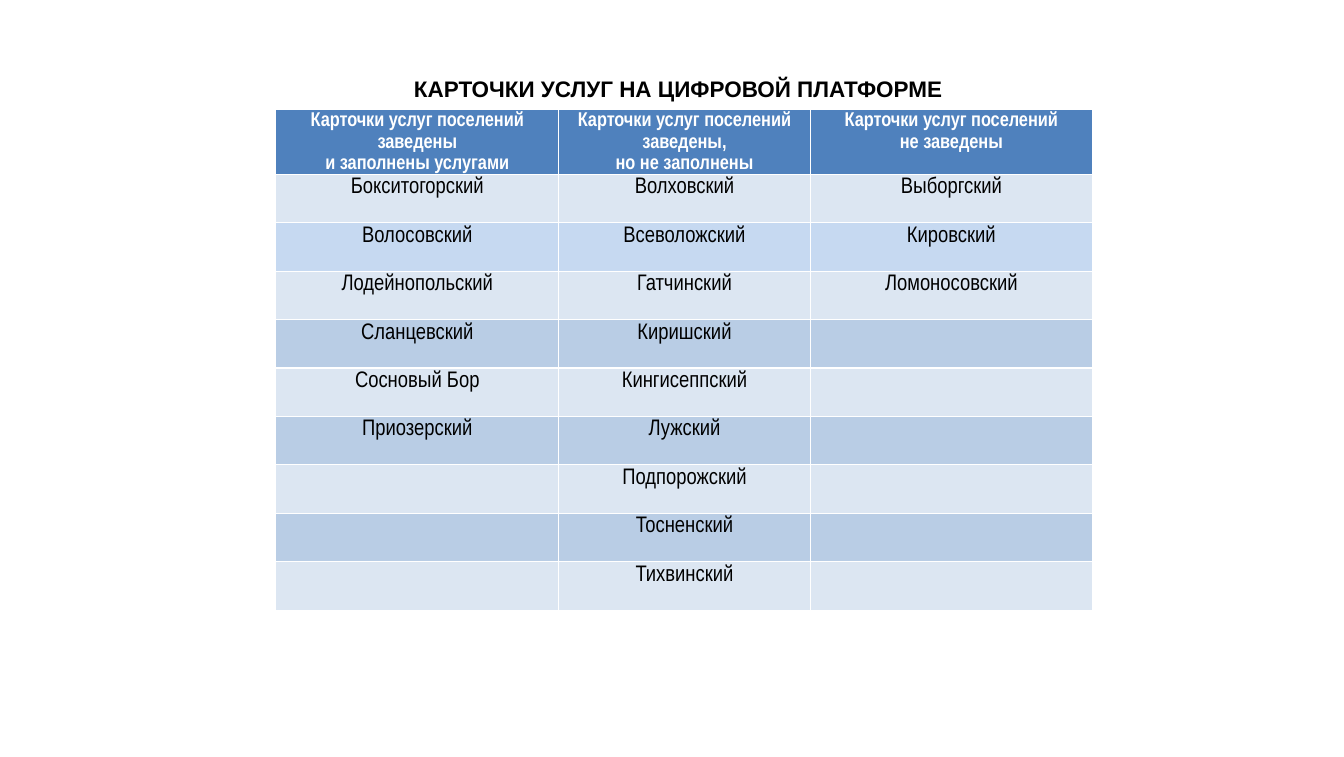
from itertools import zip_longest

from pptx import Presentation
from pptx.dml.color import RGBColor
from pptx.enum.text import MSO_ANCHOR, PP_ALIGN
from pptx.util import Cm, Pt

CENTER = PP_ALIGN.CENTER
MIDDLE = MSO_ANCHOR.MIDDLE
HEX = {
    "head": "4F81BD",
    "pale": "DCE6F2",
    "sky": "C6D9F1",
    "blue": "B9CDE5",
    "white": "FFFFFF",
    "black": "000000",
}
HEADS = [
    "Карточки услуг поселений\nзаведены\nи заполнены услугами",
    "Карточки услуг поселений заведены,\nно не заполнены",
    "Карточки услуг поселений\nне заведены",
]
AREAS = [
    ["Бокситогорский", "Волосовский", "Лодейнопольский", "Сланцевский",
     "Сосновый Бор", "Приозерский"],
    ["Волховский", "Всеволожский", "Гатчинский", "Киришский", "Кингисеппский",
     "Лужский", "Подпорожский", "Тосненский", "Тихвинский"],
    ["Выборгский", "Кировский", "Ломоносовский"],
]
WIDTHS = [8, 7.11, 7.98]
HEAD_H, ROW_H = 1.75, 1.37


def color(name):
    return RGBColor.from_string(HEX[name])


def style(para, face, size, bold, tone):
    para.alignment = CENTER
    font = para.font
    font.name, font.size, font.bold = face, Pt(size), bold
    font.color.rgb = color(tone)


def add_title(slide, left, top, width, height):
    title = slide.shapes.title
    title.left, title.top = Cm(left), Cm(top)
    title.width, title.height = Cm(width), Cm(height)
    frame = title.text_frame
    frame.text = "КАРТОЧКИ УСЛУГ НА ЦИФРОВОЙ ПЛАТФОРМЕ"
    frame.vertical_anchor = MIDDLE
    style(frame.paragraphs[0], "Arial", 18, True, "black")


def fill_cell(cell, text, fill, size, bold, tone):
    cell.fill.solid()
    cell.fill.fore_color.rgb = color(fill)
    cell.margin_left = cell.margin_right = Cm(0.19)
    cell.margin_top = cell.margin_bottom = 0
    cell.text_frame.text = text
    for para in cell.text_frame.paragraphs:
        style(para, "Arial Narrow", size, bold, tone)
        para.line_spacing = 1.15


def row_fill(row):
    if row % 2:
        return "pale"
    return "sky" if row == 2 else "blue"


def add_areas(slide, left, top):
    rows = list(zip_longest(*AREAS, fillvalue=""))
    height = HEAD_H + ROW_H * len(rows)
    table = slide.shapes.add_table(
        len(rows) + 1, len(HEADS), Cm(left), Cm(top), Cm(sum(WIDTHS)), Cm(height)
    ).table
    for col, width in zip(table.columns, WIDTHS):
        col.width = Cm(width)
    table.rows[0].height = Cm(HEAD_H)
    for col, text in enumerate(HEADS):
        fill_cell(table.cell(0, col), text, "head", 16, True, "white")
    for row, names in enumerate(rows, 1):
        table.rows[row].height = Cm(ROW_H)
        for col, name in enumerate(names):
            fill_cell(table.cell(row, col), name, row_fill(row), 18, False, "black")


def main():
    deck = Presentation()
    deck.slide_width, deck.slide_height = Cm(38), Cm(21.41)
    slide = deck.slides.add_slide(deck.slide_layouts[5])
    add_title(slide, 2.79, 1.9, 32.77, 1.19)
    add_areas(slide, 7.8, 3.1)
    deck.save("out.pptx")


if __name__ == "__main__":
    main()
